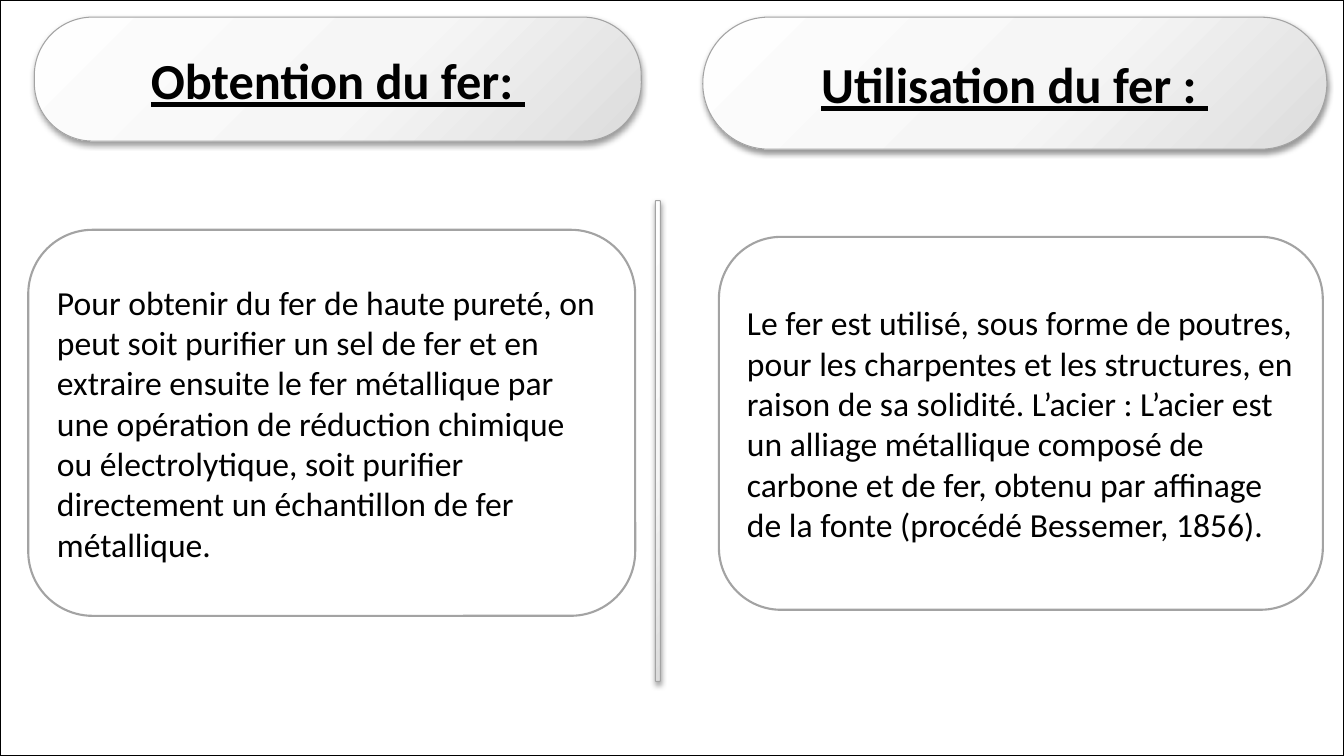
from dataclasses import dataclass

from pptx import Presentation
from pptx.dml.color import RGBColor
from pptx.enum.shapes import MSO_SHAPE
from pptx.enum.text import MSO_ANCHOR, PP_ALIGN
from pptx.oxml import parse_xml
from pptx.oxml.ns import nsdecls, qn
from pptx.util import Inches, Pt

RECTANGLE = MSO_SHAPE.RECTANGLE
ROUNDED = MSO_SHAPE.ROUNDED_RECTANGLE
MIDDLE = MSO_ANCHOR.MIDDLE
CENTER, LEFT = PP_ALIGN.CENTER, PP_ALIGN.LEFT


@dataclass(frozen=True)
class Theme:
    font: str = "Calibri"
    heading_size: Pt = Pt(36)
    body_size: Pt = Pt(24)
    ink: RGBColor = RGBColor(0x00, 0x00, 0x00)
    paper: RGBColor = RGBColor(0xFF, 0xFF, 0xFF)
    outline: RGBColor = RGBColor(0xA3, 0xA3, 0xA3)
    thin: Pt = Pt(0.75)
    thick: Pt = Pt(1.5)
    sheen: tuple = ((0, "FEFEFE"), (55, "F6F6F6"), (100, "DCDCDC"))


THEME = Theme()

presentation = Presentation()
presentation.slide_width = Inches(13.33)
presentation.slide_height = Inches(7.5)
slide = presentation.slides.add_slide(presentation.slide_layouts[6])


def add_panel(box, kind=ROUNDED, outline=THEME.outline, width=THEME.thick, glossy=False):
    """Add an outlined panel: plain white, or glossy with a radial sheen and a soft shadow."""
    panel = slide.shapes.add_shape(kind, *map(Inches, box))
    panel.shadow.inherit = False
    panel.fill.solid()
    panel.fill.fore_color.rgb = THEME.paper
    panel.line.color.rgb = outline
    panel.line.width = width
    if glossy:
        properties = panel.fill._xPr
        stops = "".join(
            f'<a:gs pos="{position * 1000}"><a:srgbClr val="{color}"/></a:gs>'
            for position, color in THEME.sheen
        )
        gradient = parse_xml(
            f'<a:gradFill {nsdecls("a")} rotWithShape="1"><a:gsLst>{stops}</a:gsLst>'
            '<a:path path="circle"><a:fillToRect l="-40000" t="-90000" r="140000" b="190000"/>'
            "</a:path></a:gradFill>"
        )
        properties.replace(properties.find(qn("a:solidFill")), gradient)
        shadow = parse_xml(
            f'<a:outerShdw {nsdecls("a")} blurRad="{Pt(4.1)}" dist="{Pt(2)}" dir="5400000" '
            'rotWithShape="0"><a:srgbClr val="000000"><a:alpha val="40000"/></a:srgbClr>'
            "</a:outerShdw>"
        )
        properties.find(qn("a:effectLst")).append(shadow)
    return panel


def write(panel, text, size, alignment, emphasis=False):
    panel.text_frame.word_wrap = True
    panel.text_frame.vertical_anchor = MIDDLE
    paragraph = panel.text_frame.paragraphs[0]
    paragraph.text = text
    paragraph.alignment = alignment
    font = paragraph.font
    font.name, font.size = THEME.font, size
    font.bold = font.underline = emphasis
    font.color.rgb = THEME.ink


add_panel((0, 0, 13.33, 7.5), RECTANGLE, THEME.ink)
add_panel((6.5, 1.99, 0.05, 4.77), width=THEME.thin, glossy=True)

topics = [
    (
        "Obtention du fer: ", (0.34, 0.17, 6.02, 1.23), 0.47,
        "Pour obtenir du fer de haute pureté, on peut soit purifier un sel de fer et en "
        "extraire ensuite le fer métallique par une opération de réduction chimique ou "
        "électrolytique, soit purifier directement un échantillon de fer métallique.",
        (0.28, 2.28, 6.02, 3.83),
    ),
    (
        "Utilisation du fer : ", (6.97, 0.17, 6.19, 1.31), 0.5,
        "Le fer est utilisé, sous forme de poutres, pour les charpentes et les structures, "
        "en raison de sa solidité. L’acier : L’acier est un alliage métallique composé de "
        "carbone et de fer, obtenu par affinage de la fonte (procédé Bessemer, 1856).",
        (7.13, 2.35, 5.99, 3.7),
    ),
]

for title, title_box, roundness, explanation, explanation_box in topics:
    heading = add_panel(title_box, width=THEME.thin, glossy=True)
    heading.adjustments[0] = roundness
    write(heading, title, THEME.heading_size, CENTER, emphasis=True)
    write(add_panel(explanation_box), explanation, THEME.body_size, LEFT)

presentation.save("out.pptx")
